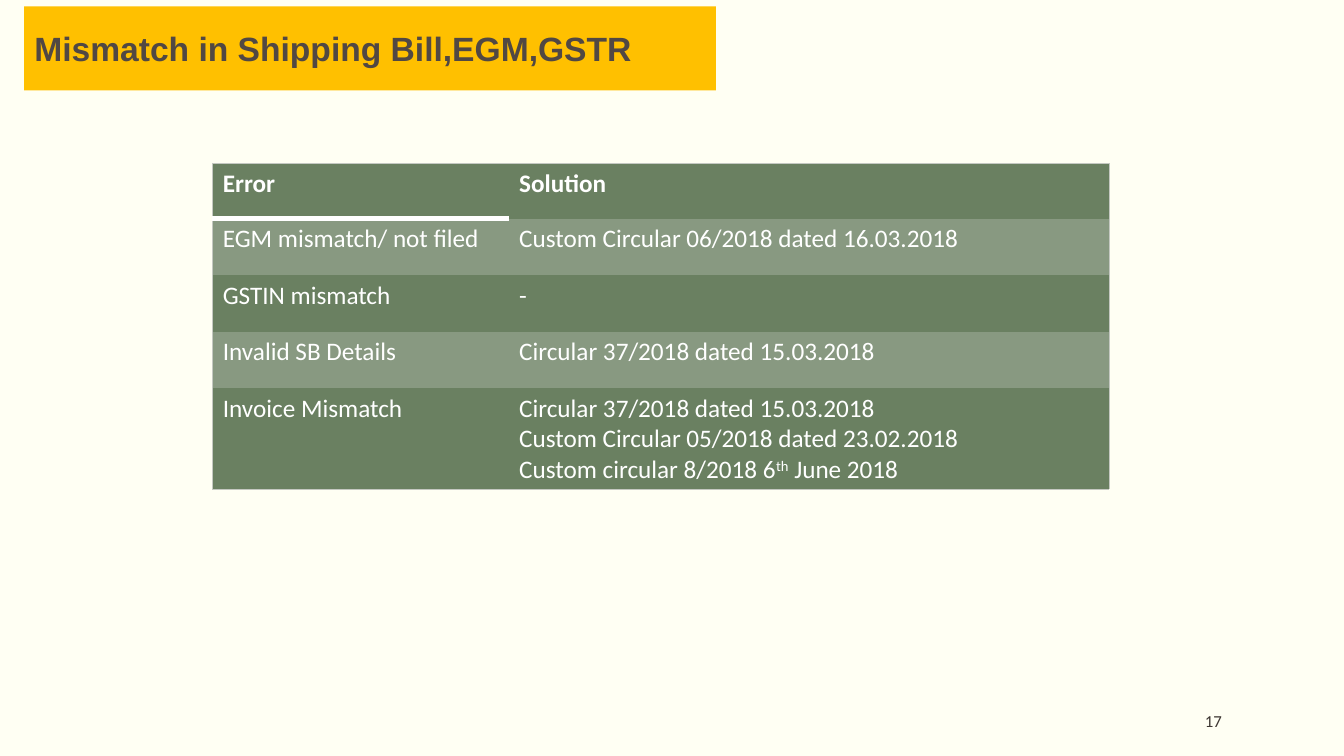
from pptx import Presentation
from pptx import util as u
from pptx.dml.color import RGBColor
from pptx.enum import text
from pptx.oxml import ns
from lxml import etree

CREAM = RGBColor(0xFF, 0xFF, 0xF3)
AMBER = RGBColor(0xFF, 0xC0, 0x00)
BROWN = RGBColor(0x51, 0x48, 0x43)
DARK = RGBColor(0x3D, 0x36, 0x32)
WHITE = RGBColor(0xFF, 0xFF, 0xFF)
GREEN = RGBColor(0x6A, 0x80, 0x61)
LIGHT_GREEN = RGBColor(0x88, 0x99, 0x81)
EDGE = RGBColor(0xC4, 0xC8, 0xC1)

WIDTH, HEIGHT = 13.33, 7.5
NO_STYLE = "{2D5ABB26-0587-4C30-8999-92F81FD0307C}"

# Cell text: a list of paragraphs, each a list of (words, baseline) runs
ROWS = [
    ("Error", "Solution"),
    ("EGM mismatch/ not filed", "Custom Circular 06/2018 dated 16.03.2018"),
    ("GSTIN mismatch", "-"),
    ("Invalid SB Details", "Circular 37/2018 dated 15.03.2018"),
    ("Invoice Mismatch", [
        [("Circular 37/2018 dated 15.03.2018", 0)],
        [("Custom Circular 05/2018 dated 23.02.2018", 0)],
        [("Custom circular 8/2018 6", 0), ("th", 30), (" June 2018", 0)],
    ]),
]


class Deck:
    TITLE = dict(name="Arial", size=u.Pt(24), bold=True)
    BODY = dict(name="Calibri", size=u.Pt(18), bold=False)
    NUMBER = dict(name="Calibri", size=u.Pt(12), bold=False)

    def __init__(self):
        self.prs = Presentation()
        self.prs.slide_width, self.prs.slide_height = u.Inches(WIDTH), u.Inches(HEIGHT)
        self.s = self.prs.slides.add_slide(self.prs.slide_layouts[5])
        fill = self.s.background.fill
        fill.solid()
        fill.fore_color.rgb = CREAM

    def box(self, x, y, w, h):
        """Turn shares of the slide's size into lengths."""
        pw, ph = self.prs.slide_width, self.prs.slide_height
        return [round(v) for v in (x * pw, y * ph, w * pw, h * ph)]

    def add_text(self, tf, paragraphs, style, color, align=text.PP_ALIGN.LEFT):
        if isinstance(paragraphs, str):
            paragraphs = [[(paragraphs, 0)]]
        for i, runs in enumerate(paragraphs):
            p = tf.add_paragraph() if i else tf.paragraphs[0]
            p.alignment = align
            for words, baseline in runs:
                r = p.add_run()
                r.text = words
                for key, value in style.items():
                    setattr(r.font, key, value)
                r.font.color.rgb = color
                if baseline:
                    r.font._element.set("baseline", str(baseline * 1000))

    def title(self, words, *share):
        sp = self.s.shapes.title
        sp.left, sp.top, sp.width, sp.height = self.box(*share)
        sp.fill.solid()
        sp.fill.fore_color.rgb = AMBER
        tf = sp.text_frame
        tf.word_wrap = True
        tf.auto_size = text.MSO_AUTO_SIZE.SHAPE_TO_FIT_TEXT
        tf.vertical_anchor = text.MSO_ANCHOR.MIDDLE
        self.add_text(tf, words, self.TITLE, BROWN)

    def page_number(self, words, *share):
        tf = self.s.shapes.add_textbox(*self.box(*share)).text_frame
        tf.word_wrap = True
        tf.margin_left = tf.margin_right = 0
        tf.vertical_anchor = text.MSO_ANCHOR.MIDDLE
        self.add_text(tf, words, self.NUMBER, DARK, text.PP_ALIGN.RIGHT)

    def border(self, cell, side, color, points):
        ln = etree.SubElement(cell._tc.get_or_add_tcPr(), ns.qn(f"a:ln{side}"),
                              w=str(u.Pt(points)))
        solid = etree.SubElement(ln, ns.qn("a:solidFill"))
        etree.SubElement(solid, ns.qn("a:srgbClr"), val=str(color))

    def table(self, rows, widths, heights, *share):
        table = self.s.shapes.add_table(len(rows), len(widths), *self.box(*share)).table
        table._tbl.tblPr.find(ns.qn("a:tableStyleId")).text = NO_STYLE
        for column, width in zip(table.columns, widths):
            column.width = u.Inches(width)
        for row, height in zip(table.rows, heights):
            row.height = u.Inches(height)
        last_row, last_col = len(rows) - 1, len(widths) - 1
        for i, row in enumerate(rows):
            for j, words in enumerate(row):
                cell = table.cell(i, j)
                self.add_text(cell.text_frame, words, {**self.BODY, "bold": i == 0}, WHITE)
                # Thin outer frame, thick rule under the first heading
                outer = {"L": j == 0, "R": j == last_col, "T": i == 0, "B": i == last_row}
                for side, on_edge in outer.items():
                    if on_edge:
                        self.border(cell, side, EDGE, 0.5)
                if (i, j) == (0, 0):
                    self.border(cell, "B", WHITE, 3.82)
                cell.fill.solid()
                cell.fill.fore_color.rgb = LIGHT_GREEN if i % 2 else GREEN


def main():
    deck = Deck()
    # Heading band
    deck.title("Mismatch in Shipping Bill,EGM,GSTR",
               0.24 / WIDTH, 0.23 / HEIGHT, 6.86 / WIDTH, 0.5 / HEIGHT)
    # Errors and their solutions
    deck.table(ROWS, (2.94, 5.95), (0.55, 0.56, 0.56, 0.56, 0.97),
               2.11 / WIDTH, 1.62 / HEIGHT, 8.89 / WIDTH, 3.2 / HEIGHT)
    # Page number
    deck.page_number("17", 10.12 / WIDTH, 6.95 / HEIGHT, 2 / WIDTH, 0.4 / HEIGHT)
    deck.prs.save("out.pptx")


if __name__ == "__main__":
    main()
